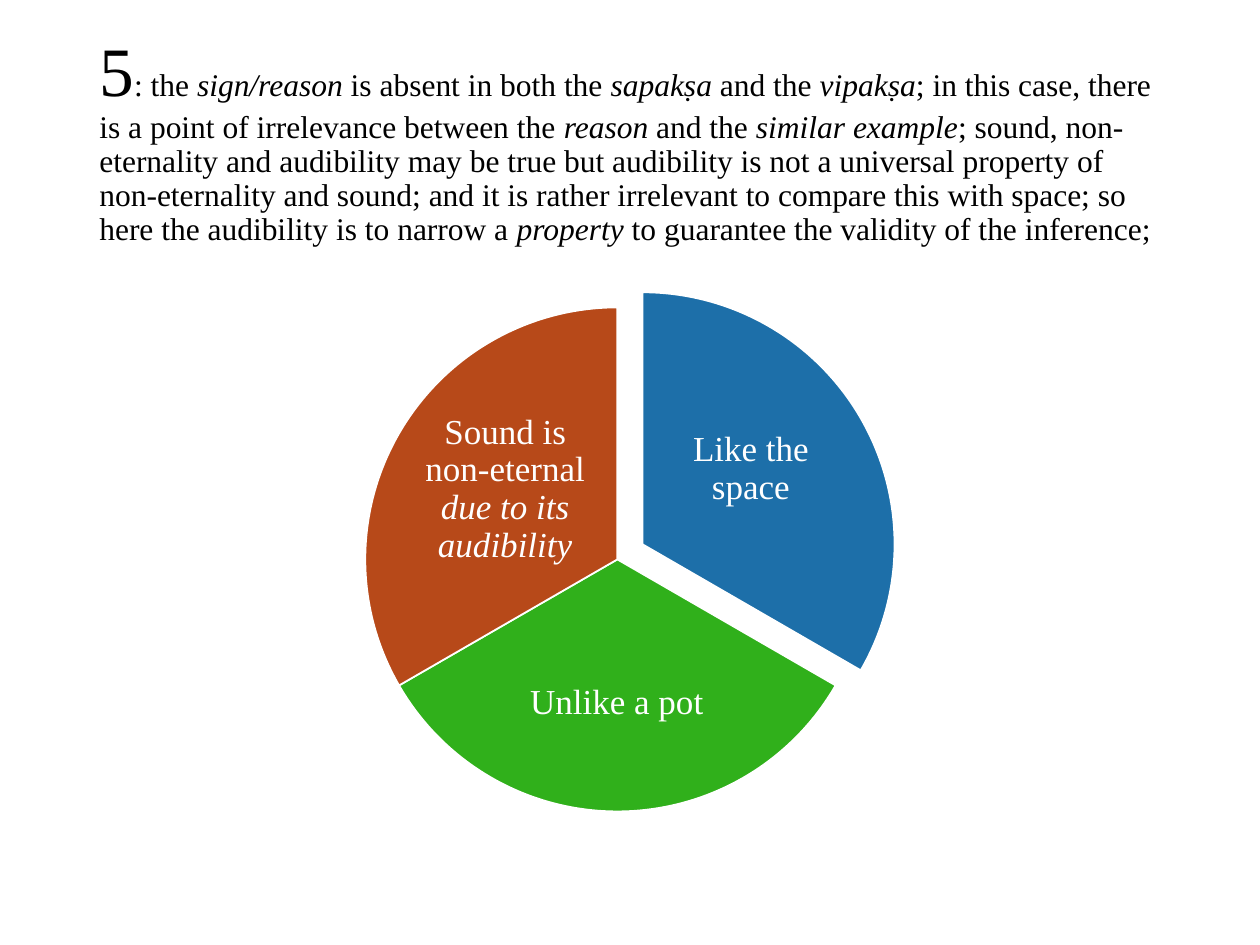
"""Build a slide with a paragraph above a three-part pie of labelled sectors."""
from dataclasses import dataclass

from pptx import Presentation
from pptx.dml.color import RGBColor
from pptx.enum.shapes import MSO_SHAPE as Preset
from pptx.enum.text import MSO_ANCHOR as Anchor, PP_ALIGN as Align
from pptx.util import Inches, Pt

COLORS = {
    "text": "000000",
    "white": "FFFFFF",
    "blue": "1D6FA9",
    "green": "30B01B",
    "rust": "B74919",
}
FONT = "Times New Roman"
DIAMETER = 4
SWEEP = 120
ADJUSTMENT_PER_DEGREE = 0.6


@dataclass(frozen=True)
class Run:
    text: str
    italic: bool = False
    size: float | None = None


@dataclass(frozen=True)
class Sector:
    left: float
    top: float
    start: int
    color: str
    label_box: tuple[float, float, float, float]
    label: tuple[Run, ...]


STATEMENT = (
    Run("5", size=39.6),
    Run(": the "),
    Run("sign/reason", italic=True),
    Run(" is absent in both the "),
    Run("sapakṣa", italic=True),
    Run(" and the "),
    Run("vipakṣa", italic=True),
    Run("; in this case, there is a point of irrelevance between the "),
    Run("reason", italic=True),
    Run(" and the "),
    Run("similar example", italic=True),
    Run(
        "; sound, non-eternality and audibility may be true but audibility is not "
        "a universal property of non-eternality and sound; and it is rather "
        "irrelevant to compare this with space; so here the audibility is to narrow a "
    ),
    Run("property", italic=True),
    Run(" to guarantee the validity of the inference;"),
)

SECTORS = (
    Sector(3.1, 2.32, 270, "blue", (5.28, 3.06, 1.36, 1.33), (Run("Like the space"),)),
    Sector(2.9, 2.44, 30, "green", (3.99, 4.96, 1.81, 1.24), (Run("Unlike a pot"),)),
    Sector(
        2.9, 2.44, 150, "rust", (3.33, 3.22, 1.36, 1.33),
        (Run("Sound is non-eternal "), Run("due to its audibility", italic=True)),
    ),
)


def rgb(name: str) -> RGBColor:
    """Return the named colour."""
    return RGBColor.from_string(COLORS[name])


def add_text(
    shapes,
    box: tuple[float, float, float, float],
    runs: tuple[Run, ...],
    size: float,
    color: str,
    align: Align,
    insets: tuple[float, float],
) -> None:
    """Add a wrapped, vertically centred text box with one paragraph."""
    frame = shapes.add_textbox(*map(Inches, box)).text_frame
    frame.word_wrap = True
    frame.vertical_anchor = Anchor.MIDDLE
    frame.margin_left = frame.margin_right = Inches(insets[0])
    frame.margin_top = frame.margin_bottom = Inches(insets[1])
    paragraph = frame.paragraphs[0]
    paragraph.alignment = align
    paragraph.line_spacing = 0.9
    paragraph.font.name = FONT
    paragraph.font.size = Pt(size)
    paragraph.font.color.rgb = rgb(color)
    for item in runs:
        run = paragraph.add_run()
        run.text = item.text
        if item.italic:
            run.font.italic = True
        if item.size:
            run.font.size = Pt(item.size)


def add_sector(shapes, sector: Sector) -> None:
    """Add one pie sector and its label."""
    shape = shapes.add_shape(
        Preset.PIE, Inches(sector.left), Inches(sector.top),
        Inches(DIAMETER), Inches(DIAMETER),
    )
    end = (sector.start + SWEEP) % 360
    shape.adjustments[0] = sector.start * ADJUSTMENT_PER_DEGREE
    shape.adjustments[1] = end * ADJUSTMENT_PER_DEGREE
    shape.shadow.inherit = False
    shape.fill.solid()
    shape.fill.fore_color.rgb = rgb(sector.color)
    shape.line.color.rgb = rgb("white")
    shape.line.width = Pt(1)
    add_text(
        shapes, sector.label_box, sector.label, 20, "white", Align.CENTER, (0.03, 0.03)
    )


def main() -> None:
    """Build and save the presentation."""
    presentation = Presentation()
    presentation.slide_width = Inches(10)
    presentation.slide_height = Inches(7.5)
    slide = presentation.slides.add_slide(presentation.slide_layouts[6])
    add_text(
        slide.shapes, (0.69, 0.4, 8.62, 1.45), STATEMENT, 18, "text",
        Align.LEFT, (0.1, 0.05),
    )
    pie = slide.shapes.add_group_shape()
    for sector in SECTORS:
        add_sector(pie.shapes, sector)
    presentation.save("out.pptx")


if __name__ == "__main__":
    main()
